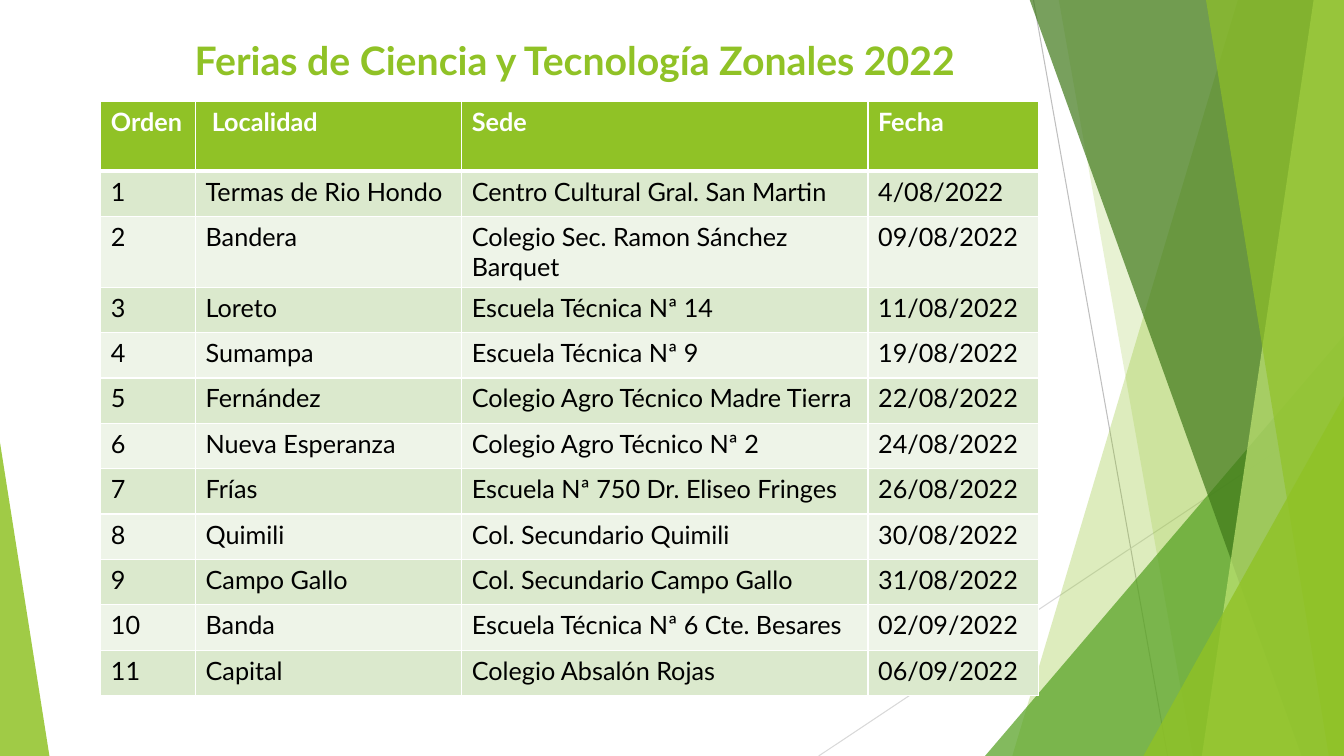
from pptx import Presentation
from pptx.dml.color import RGBColor
from pptx.enum.shapes import MSO_CONNECTOR, MSO_SHAPE
from pptx.enum.text import MSO_ANCHOR, PP_ALIGN
from pptx.oxml import parse_xml
from pptx.oxml.ns import nsdecls, qn
from pptx.util import Inches, Pt
from lxml.etree import SubElement

GREEN, WHITE, BLACK = "90C226", "FFFFFF", "000000"
BANDS = ("DBE9CD", "EEF4E8")
WIDE, HIGH, TOP = 13.33, 7.5, -0.01
COLS = (0.94, 2.64, 4.03, 1.69)
ROW, TALL = 0.45, {0: 0.69, 2: 0.7}
HEAD = ("Orden", " Localidad", "Sede", "Fecha")
FAIRS = (
    ("Termas de Rio Hondo", "Centro Cultural Gral. San Martin", "4/08/2022"),
    ("Bandera", "Colegio Sec. Ramon Sánchez Barquet", "09/08/2022"),
    ("Loreto", "Escuela Técnica Nª 14", "11/08/2022"),
    ("Sumampa", "Escuela Técnica Nª 9", "19/08/2022"),
    ("Fernández", "Colegio Agro Técnico Madre Tierra", "22/08/2022"),
    ("Nueva Esperanza", "Colegio Agro Técnico Nª 2", "24/08/2022"),
    ("Frías", "Escuela Nª 750 Dr. Eliseo Fringes", "26/08/2022"),
    ("Quimili", "Col. Secundario Quimili", "30/08/2022"),
    ("Campo Gallo", "Col. Secundario Campo Gallo", "31/08/2022"),
    ("Banda", "Escuela Técnica Nª 6 Cte. Besares", "02/09/2022"),
    ("Capital", "Colegio Absalón Rojas", "06/09/2022"),
)


def paint(target, color, alpha=100):
    target.solid()
    target.fore_color.rgb = RGBColor.from_string(color)
    if alpha < 100:
        node = target._xPr.find(qn("a:solidFill"))[0]
        SubElement(node, qn("a:alpha")).set("val", str(alpha * 1000))


class Deck:
    """Draws styled elements on the current slide."""

    def __init__(self, slide, font="Lato"):
        self.slide, self.font = slide, font
        self.shapes = slide.shapes

    def label(self, frame, text, size, color, bold=False, align=None):
        para = frame.paragraphs[0]
        para.alignment = align
        run = para.add_run()
        run.text = text
        run.font.name, run.font.size, run.font.bold = self.font, Pt(size), bold
        paint(run.font.fill, color)

    def title(self, text, left, top, width, height):
        box = self.shapes.title
        box.left, box.top = Inches(left), Inches(top)
        box.width, box.height = Inches(width), Inches(height)
        box.text_frame.word_wrap = True
        box.text_frame.vertical_anchor = MSO_ANCHOR.TOP
        self.label(box.text_frame, text, 28, GREEN, True, PP_ALIGN.CENTER)

    def line(self, start, end, color):
        ends = [Inches(n) for n in (*start, *end)]
        rule = self.shapes.add_connector(MSO_CONNECTOR.STRAIGHT, *ends)
        rule.line.width = Pt(0.75)
        paint(rule.line.fill, color)
        SubElement(rule._element.spPr, qn("a:effectLst"))

    def finish(self, shape, color, alpha):
        shape.shadow.inherit = False
        shape.line.fill.background()
        paint(shape.fill, color, alpha)

    def shard(self, upper, lower, color, alpha):
        points = [(upper, TOP), (WIDE, TOP), (WIDE, HIGH), (lower, HIGH)]
        first, *rest = [(Inches(x), Inches(y)) for x, y in points]
        pen = self.shapes.build_freeform(*first)
        pen.add_line_segments(rest, close=True)
        self.finish(pen.convert_to_shape(), color, alpha)

    def wedge(self, left, top, width, tip, color, alpha):
        area = [Inches(n) for n in (left, top, width, HIGH - top)]
        shape = self.shapes.add_shape(MSO_SHAPE.ISOSCELES_TRIANGLE, *area)
        shape.adjustments[0] = tip
        self.finish(shape, color, alpha)

    def border(self, cell, row):
        props = cell._tc.get_or_add_tcPr()
        for spot, side in enumerate("LRTB"):
            thick = (row, side) in ((0, "B"), (1, "T"))
            props.insert(spot, parse_xml(
                f'<a:ln{side} {nsdecls("a")} w="{Pt(3 if thick else 1)}"><a:solidFill>'
                f'<a:srgbClr val="{WHITE}"/></a:solidFill></a:ln{side}>'))

    def table(self, rows, left, top):
        highs = [TALL.get(n, ROW) for n in range(len(rows))]
        area = [Inches(n) for n in (left, top, sum(COLS), sum(highs))]
        grid = self.shapes.add_table(len(rows), len(COLS), *area).table
        for col, width in zip(grid.columns, COLS):
            col.width = Inches(width)
        for r, (row, high) in enumerate(zip(rows, highs)):
            grid.rows[r].height = Inches(high)
            for c, text in enumerate(row):
                cell = grid.cell(r, c)
                paint(cell.fill, BANDS[(r - 1) % 2] if r else GREEN)
                self.border(cell, r)
                self.label(cell.text_frame, text, 18, BLACK if r else WHITE, r == 0)


def main():
    show = Presentation()
    show.slide_width, show.slide_height = Inches(WIDE), Inches(HIGH)
    deck = Deck(show.slides.add_slide(show.slide_layouts[5]))
    deck.line((10.25, 0), (11.58, HIGH), "BFBFBF")
    deck.line((WIDE, 4.03), (8.12, HIGH), "D9D9D9")
    deck.shard(12.28, 10.04, GREEN, 30)
    deck.shard(10.5, 11.83, GREEN, 20)
    deck.wedge(9.77, 3.33, 3.56, 1, "54A021", 72)
    deck.shard(10.21, 12.91, "3F7819", 70)
    deck.shard(13.03, 11.92, "C0E474", 70)
    deck.shard(11.96, 13.18, GREEN, 65)
    deck.wedge(11.34, 3.93, 1.99, 1, GREEN, 80)
    deck.wedge(0, 4.39, 0.49, 0, GREEN, 85)
    deck.title("Ferias de Ciencia y Tecnología Zonales 2022", 1, 0.31, 9.4, 0.71)
    rows = [(str(n), *fair) for n, fair in enumerate(FAIRS, 1)]
    deck.table([HEAD, *rows], 1, 1.01)
    show.save("out.pptx")


if __name__ == "__main__":
    main()
